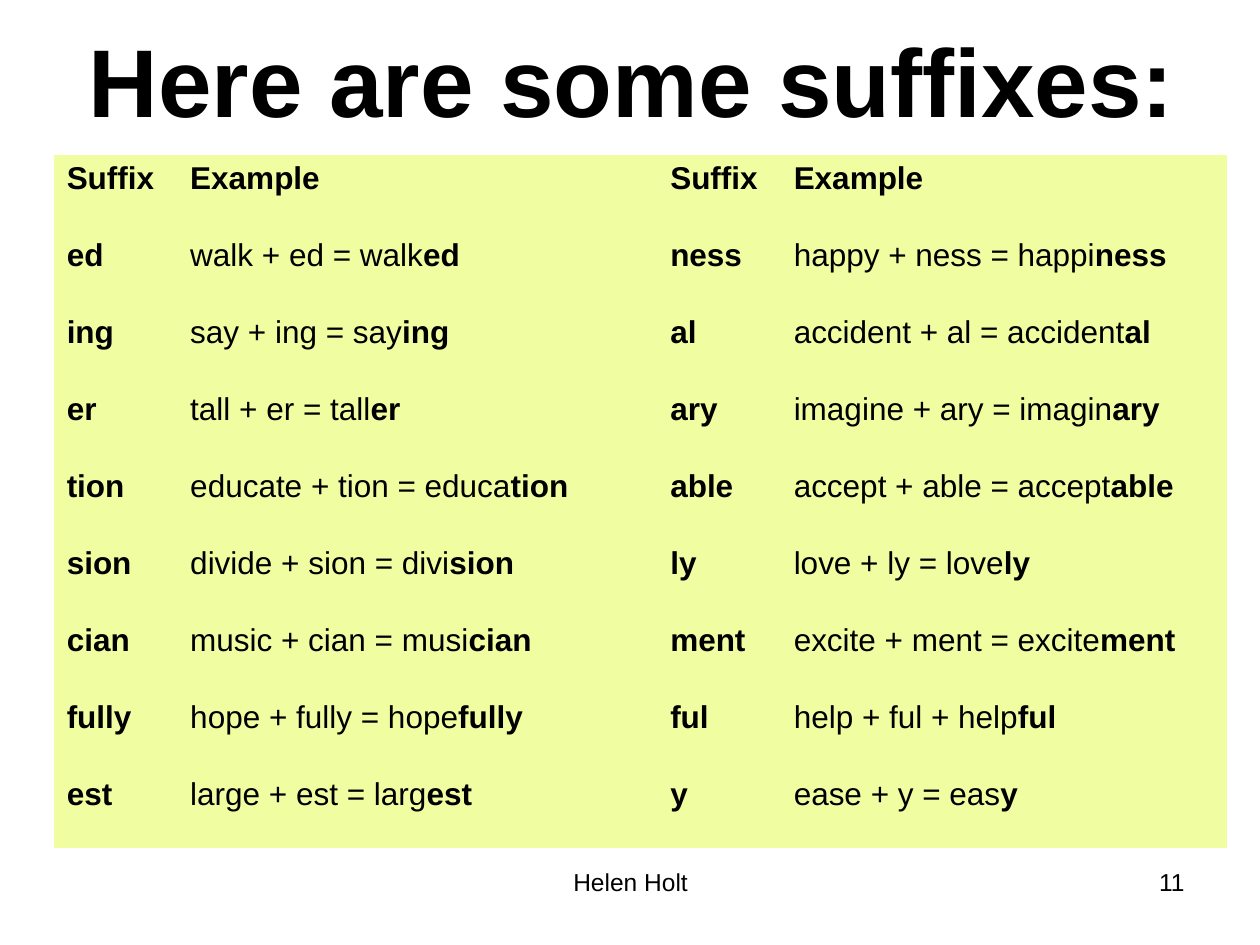
"""Build a slide with a table of suffixes and worked examples."""
from pptx import Presentation
from pptx.dml.color import RGBColor
from pptx.enum.text import MSO_ANCHOR, PP_ALIGN
from pptx.util import Inches, Pt

BLACK = RGBColor(0x00, 0x00, 0x00)
LIME = RGBColor(0xF0, 0xFD, 0xA1)
FONT = "Arial"
NO_GRID_STYLE = "{2D5ABB26-0587-4C30-8999-92F81FD0307C}"

TITLE = "Here are some suffixes:"
AUTHOR = "Helen Holt"
PAGE_NUMBER = "11"
HEADINGS = ("Suffix", "Example")
LEFT_SUFFIXES = [
    ("ed", "walk + ed = walk"),
    ("ing", "say + ing = say"),
    ("er", "tall + er = tall"),
    ("tion", "educate + tion = educa"),
    ("sion", "divide + sion = divi"),
    ("cian", "music + cian = musi"),
    ("fully", "hope + fully = hope"),
    ("est", "large + est = larg"),
]
RIGHT_SUFFIXES = [
    ("ness", "happy + ness = happi"),
    ("al", "accident + al = accident"),
    ("ary", "imagine + ary = imagin"),
    ("able", "accept + able = accept"),
    ("ly", "love + ly = love"),
    ("ment", "excite + ment = excite"),
    ("ful", "help + ful + help"),
    ("y", "ease + y = eas"),
]
COLUMN_WIDTHS = (0.98, 3.51, 0.3, 0.98, 3.54)
BLOCKS = {0: LEFT_SUFFIXES, 3: RIGHT_SUFFIXES}
TABLE_LEFT, TABLE_TOP, TABLE_HEIGHT = 0.43, 1.23, 5.5
HANGING_INDENT = Inches(0.38)


def add_run(paragraph, words, size, bold):
    run = paragraph.add_run()
    run.text = words
    run.font.name = FONT
    run.font.size = Pt(size)
    run.font.bold = bold
    run.font.color.rgb = BLACK


def add_label(slide, words, box, size, align, anchor=MSO_ANCHOR.TOP, bold=False):
    frame = slide.shapes.add_textbox(*map(Inches, box)).text_frame
    frame.word_wrap = True
    frame.vertical_anchor = anchor
    frame.paragraphs[0].alignment = align
    add_run(frame.paragraphs[0], words, size, bold)


def fill_cell(cell, *parts):
    paragraph = cell.text_frame.paragraphs[0]
    properties = paragraph._p.get_or_add_pPr()
    properties.set("marL", str(HANGING_INDENT))
    properties.set("indent", str(-HANGING_INDENT))
    for words, bold in parts:
        add_run(paragraph, words, 18, bold)


def add_suffix_table(slide):
    row_count = len(LEFT_SUFFIXES) + 1
    frame = slide.shapes.add_table(
        row_count, len(COLUMN_WIDTHS), Inches(TABLE_LEFT), Inches(TABLE_TOP),
        Inches(sum(COLUMN_WIDTHS)), Inches(TABLE_HEIGHT))
    table = frame.table
    table.first_row = table.horz_banding = False
    table._tbl.tblPr[0].text = NO_GRID_STYLE
    for column, width in zip(table.columns, COLUMN_WIDTHS):
        column.width = Inches(width)
    for cell in table.iter_cells():
        cell.fill.solid()
        cell.fill.fore_color.rgb = LIME
    for first, suffixes in BLOCKS.items():
        for offset, heading in enumerate(HEADINGS):
            fill_cell(table.cell(0, first + offset), (heading, True))
        for row, (suffix, working) in enumerate(suffixes, start=1):
            fill_cell(table.cell(row, first), (suffix, True))
            fill_cell(table.cell(row, first + 1), (working, False), (suffix, True))


def main():
    deck = Presentation()
    deck.slide_width, deck.slide_height = Inches(10), Inches(7.5)
    slide = deck.slides.add_slide(deck.slide_layouts[6])
    add_label(slide, AUTHOR, (3.42, 6.83, 3.17, 0.52), 14, PP_ALIGN.CENTER)
    add_label(slide, PAGE_NUMBER, (7.17, 6.83, 2.33, 0.52), 14, PP_ALIGN.RIGHT)
    add_label(slide, TITLE, (0.51, 0, 9, 1.25), 55, PP_ALIGN.CENTER,
              MSO_ANCHOR.MIDDLE, True)
    add_suffix_table(slide)
    deck.save("out.pptx")


if __name__ == "__main__":
    main()
